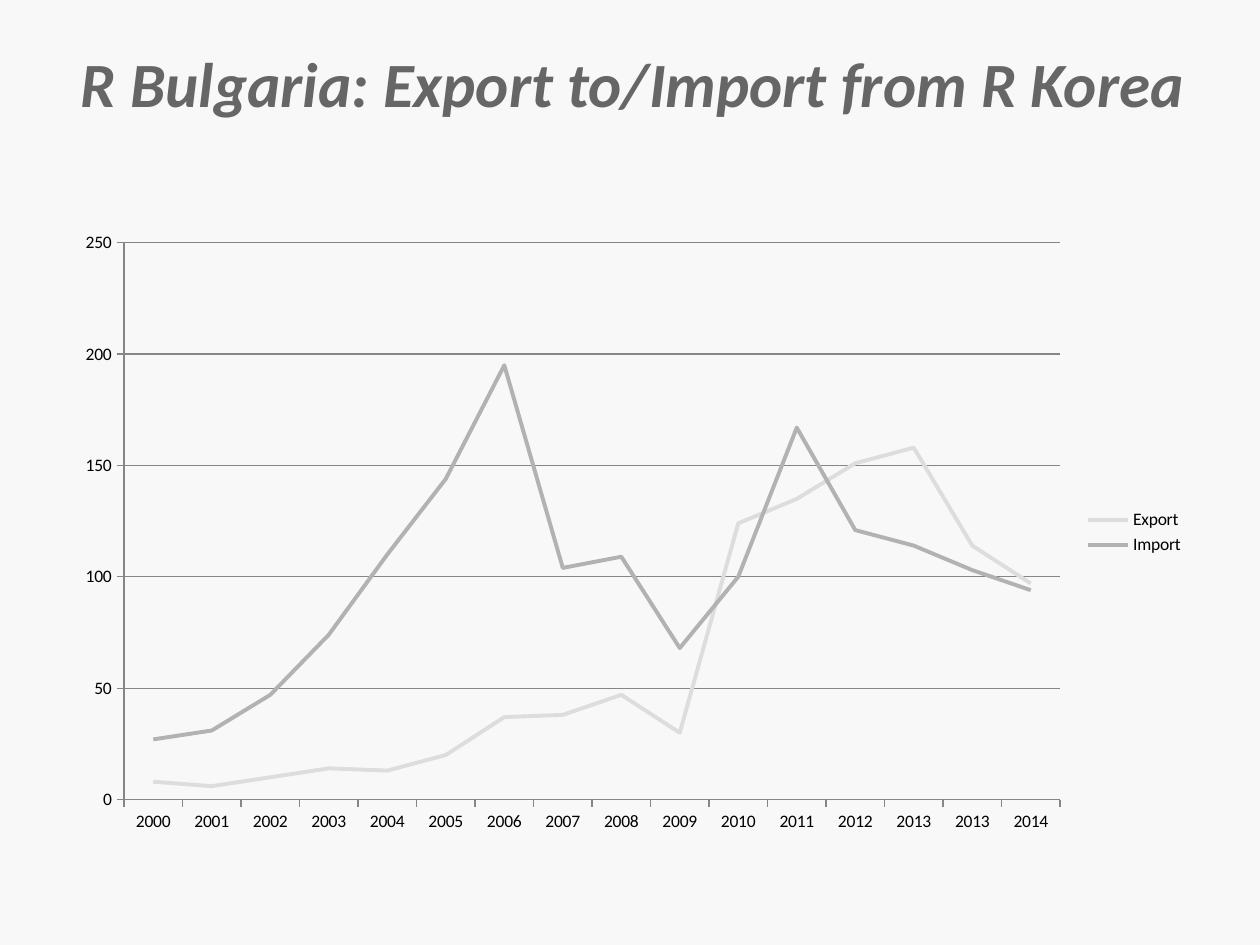
from dataclasses import dataclass

from pptx import Presentation
from pptx import util as u
from pptx.chart.data import CategoryChartData
from pptx.dml.color import RGBColor
from pptx.enum import chart as charts, text


@dataclass(frozen=True)
class Theme:
    font: str = "Calibri"
    background: str = "F8F8F8"
    title: str = "666666"
    label: str = "000000"
    rule: str = "868686"
    export: str = "DDDDDD"
    imports: str = "B2B2B2"
    title_size: int = 36
    label_size: int = 10
    rule_width: float = 0.75
    series_width: float = 2.25


THEME = Theme()
YEARS = [str(year) for year in range(2000, 2014)] + ["2013", "2014"]
TRADE = [
    ("Export", THEME.export,
     [8, 6, 10, 14, 13, 20, 37, 38, 47, 30, 124, 135, 151, 158, 114, 97]),
    ("Import", THEME.imports,
     [27, 31, 47, 74, 110, 144, 195, 104, 109, 68, 100, 167, 121, 114, 103, 94]),
]


def color(value):
    return RGBColor.from_string(value)


def style_line(line, value, width):
    line.color.rgb = color(value)
    line.width = u.Pt(width)


def set_background(page):
    fill = page.background.fill
    fill.solid()
    fill.fore_color.rgb = color(THEME.background)


def add_title(page, words):
    box = page.shapes.add_textbox(
        u.Inches(0.5), u.Inches(0.3), u.Inches(9), u.Inches(1.25))
    frame = box.text_frame
    frame.word_wrap = True
    frame.vertical_anchor = text.MSO_ANCHOR.TOP
    para = frame.paragraphs[0]
    para.alignment = text.PP_ALIGN.RIGHT
    span = para.add_run()
    span.text = words
    font = span.font
    font.name = THEME.font
    font.size = u.Pt(THEME.title_size)
    font.bold = True
    font.italic = True
    font.color.rgb = color(THEME.title)


def style_axis(axis):
    axis.major_tick_mark = charts.XL_TICK_MARK.OUTSIDE
    axis.minor_tick_mark = charts.XL_TICK_MARK.NONE
    style_line(axis.format.line, THEME.rule, THEME.rule_width)


def add_trade_chart(page):
    data = CategoryChartData(number_format="General")
    data.categories = YEARS
    for name, _, values in TRADE:
        data.add_series(name, values)
    chart = page.shapes.add_chart(
        charts.XL_CHART_TYPE.LINE, u.Inches(0.5), u.Inches(1.75),
        u.Inches(9), u.Inches(4.95), data).chart
    chart.has_title = False
    chart.font.name = THEME.font
    chart.font.size = u.Pt(THEME.label_size)
    chart.font.color.rgb = color(THEME.label)

    chart.has_legend = True
    chart.legend.position = charts.XL_LEGEND_POSITION.RIGHT
    chart.legend.include_in_layout = False

    style_axis(chart.category_axis)
    value_axis = chart.value_axis
    style_axis(value_axis)
    value_axis.minimum_scale = 0
    value_axis.maximum_scale = 250
    value_axis.major_unit = 50
    value_axis.has_major_gridlines = True
    style_line(value_axis.major_gridlines.format.line, THEME.rule, THEME.rule_width)

    plot = chart.plots[0]
    plot.vary_by_categories = False
    for series, (_, shade, _) in zip(plot.series, TRADE):
        series.smooth = False
        series.marker.style = charts.XL_MARKER_STYLE.NONE
        style_line(series.format.line, shade, THEME.series_width)


def main():
    deck = Presentation()
    deck.slide_width = u.Inches(10)
    deck.slide_height = u.Inches(7.5)
    page = deck.slides.add_slide(deck.slide_layouts[6])
    set_background(page)
    add_title(page, "R Bulgaria: Export to/Import from R Korea")
    add_trade_chart(page)
    deck.save("out.pptx")


if __name__ == "__main__":
    main()
